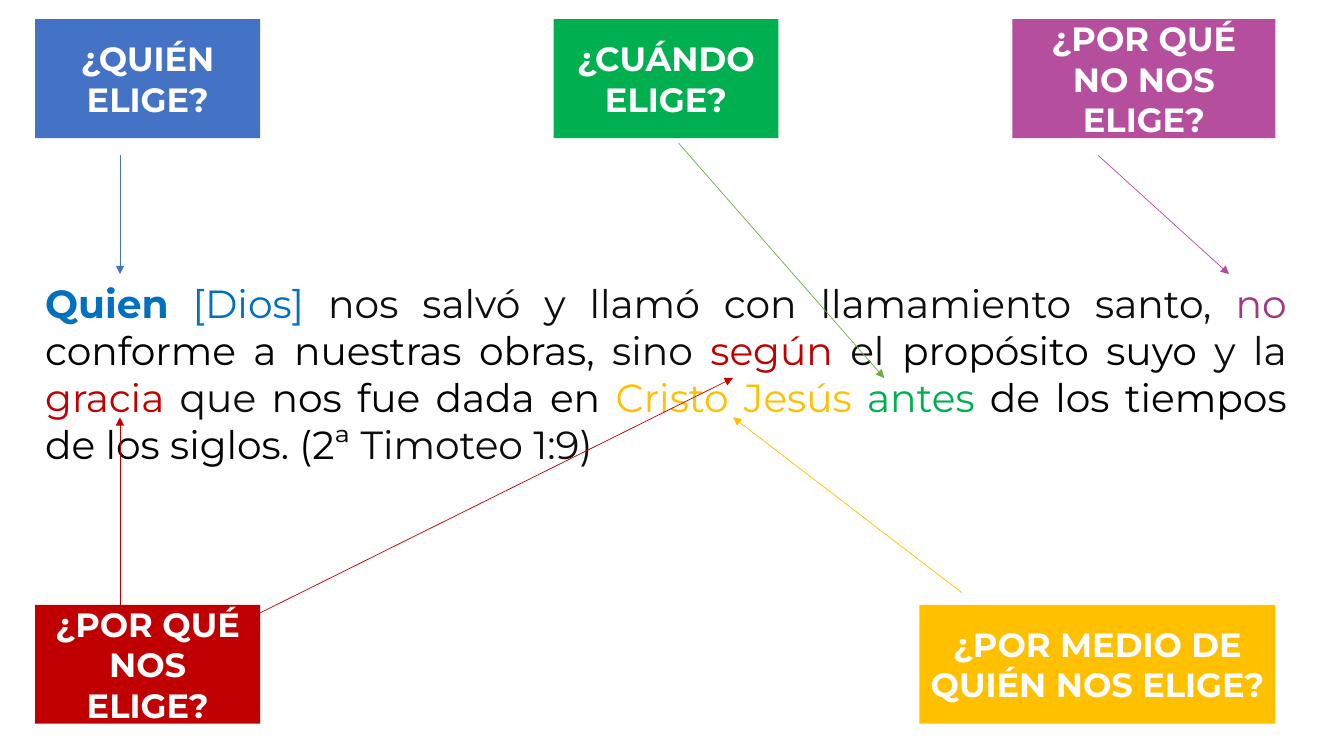
from lxml.etree import SubElement
from pptx import Presentation
from pptx.dml.color import RGBColor
from pptx.enum.shapes import MSO_CONNECTOR, MSO_SHAPE
from pptx.enum.text import MSO_ANCHOR, PP_ALIGN
from pptx.oxml.ns import qn
from pptx.util import Inches, Pt

COLORS = {
    "blue": "4472C4", "green": "00B050", "purple": "B54E9D",
    "red": "C00000", "gold": "FFC000", "leaf": "70AD47",
    "sky": "0070C0", "plum": "A03887", "ink": "0D0D0D",
    "black": "000000", "white": "FFFFFF",
}
FONT = "Montserrat"
LEFT, TOP, BASE, HIGH = 0.35, 0.19, 6, 1.18

BOXES = [
    ("¿QUIÉN ELIGE?", LEFT, TOP, 2.23, "blue"),
    ("¿CUÁNDO ELIGE?", 5.49, TOP, 2.23, "green"),
    ("¿POR QUÉ NO NOS ELIGE?", 10.04, TOP, 2.61, "purple"),
    ("¿POR QUÉ NOS ELIGE?", LEFT, BASE, 2.23, "red"),
    ("¿POR MEDIO DE QUIÉN NOS ELIGE?", 9.12, BASE, 3.53, "gold"),
]
VERSE = [
    ("Quien", "sky", True),
    (" [Dios] ", "sky", False),
    ("nos salvó y llamó con llamamiento santo, ", "ink", False),
    ("no ", "plum", False),
    ("conforme a nuestras obras, ", "black", False),
    ("sino ", "ink", False),
    ("según", "red", False),
    (" el ", "ink", False),
    ("propósito suyo ", "black", False),
    ("y la ", "ink", False),
    ("gracia", "red", False),
    (" que ", "ink", False),
    ("nos fue dada en ", "black", False),
    ("Cristo Jesús ", "gold", False),
    ("antes ", "green", False),
    ("de los tiempos de los siglos. (2ª ", "black", False),
    ("Timoteo 1:9)", "ink", False),
]
ARROWS = [
    ((1.19, 1.54), (1.19, 2.72), "blue"),
    ((6.73, 1.42), (8.77, 3.75), "leaf"),
    ((10.89, 1.54), (12.19, 2.72), "purple"),
    ((1.19, 6), (1.19, 4.14), "red"),
    ((9.54, 5.88), (7.27, 4.14), "gold"),
    ((2.58, 6.08), (7.27, 3.75), "red"),
]


def color(name):
    return RGBColor.from_string(COLORS[name])


def add_run(para, text, size, tint, bold):
    run = para.add_run()
    run.text = text
    font = run.font
    font.name = FONT
    font.size = Pt(size)
    font.bold = bold
    font.color.rgb = color(tint)


def add_verse(slide):
    box = slide.shapes.add_textbox(
        Inches(LEFT), Inches(2.72), Inches(12.51), Inches(1.99))
    frame = box.text_frame
    frame.word_wrap = True
    para = frame.paragraphs[0]
    para.alignment = PP_ALIGN.JUSTIFY
    for text, tint, bold in VERSE:
        add_run(para, text, 28, tint, bold)


def add_box(slide, text, left, top, width, tint):
    box = slide.shapes.add_shape(
        MSO_SHAPE.RECTANGLE, Inches(left), Inches(top), Inches(width), Inches(HIGH))
    box.shadow.inherit = False
    box.fill.solid()
    box.fill.fore_color.rgb = color(tint)
    box.line.fill.background()
    frame = box.text_frame
    frame.word_wrap = True
    frame.vertical_anchor = MSO_ANCHOR.MIDDLE
    para = frame.paragraphs[0]
    para.alignment = PP_ALIGN.CENTER
    add_run(para, text, 24, "white", True)


def add_arrow(slide, start, end, tint):
    arrow = slide.shapes.add_connector(
        MSO_CONNECTOR.STRAIGHT, *map(Inches, start + end))
    arrow.line.color.rgb = color(tint)
    arrow.line.width = Pt(0.5)
    SubElement(arrow.line._get_or_add_ln(), qn("a:tailEnd"), type="triangle")
    SubElement(arrow._element.spPr, qn("a:effectLst"))


def main():
    deck = Presentation()
    deck.slide_width = Inches(13.33)
    deck.slide_height = Inches(7.5)
    slide = deck.slides.add_slide(deck.slide_layouts[6])
    add_verse(slide)
    for box in BOXES:
        add_box(slide, *box)
    for arrow in ARROWS:
        add_arrow(slide, *arrow)
    deck.save("out.pptx")


if __name__ == "__main__":
    main()
